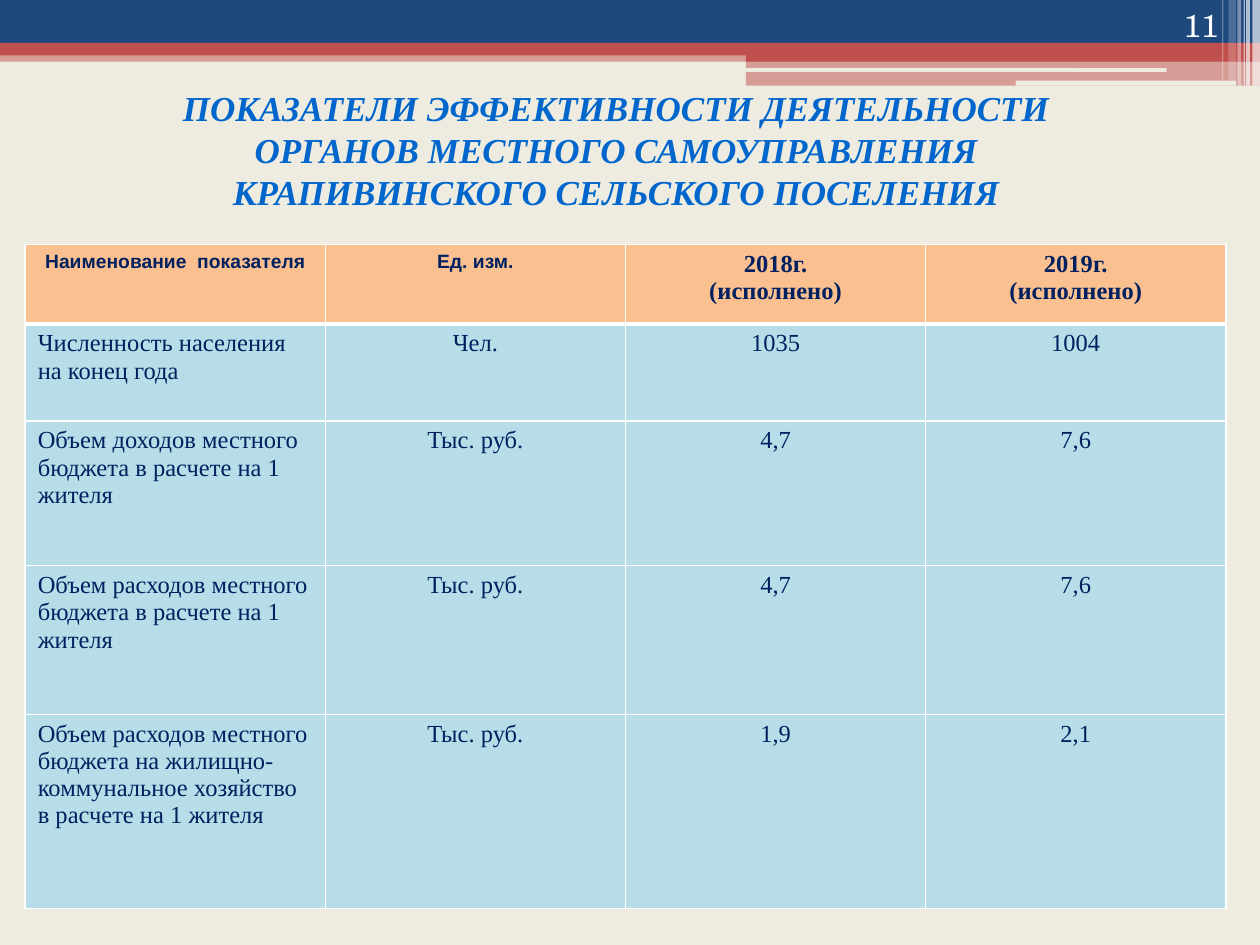
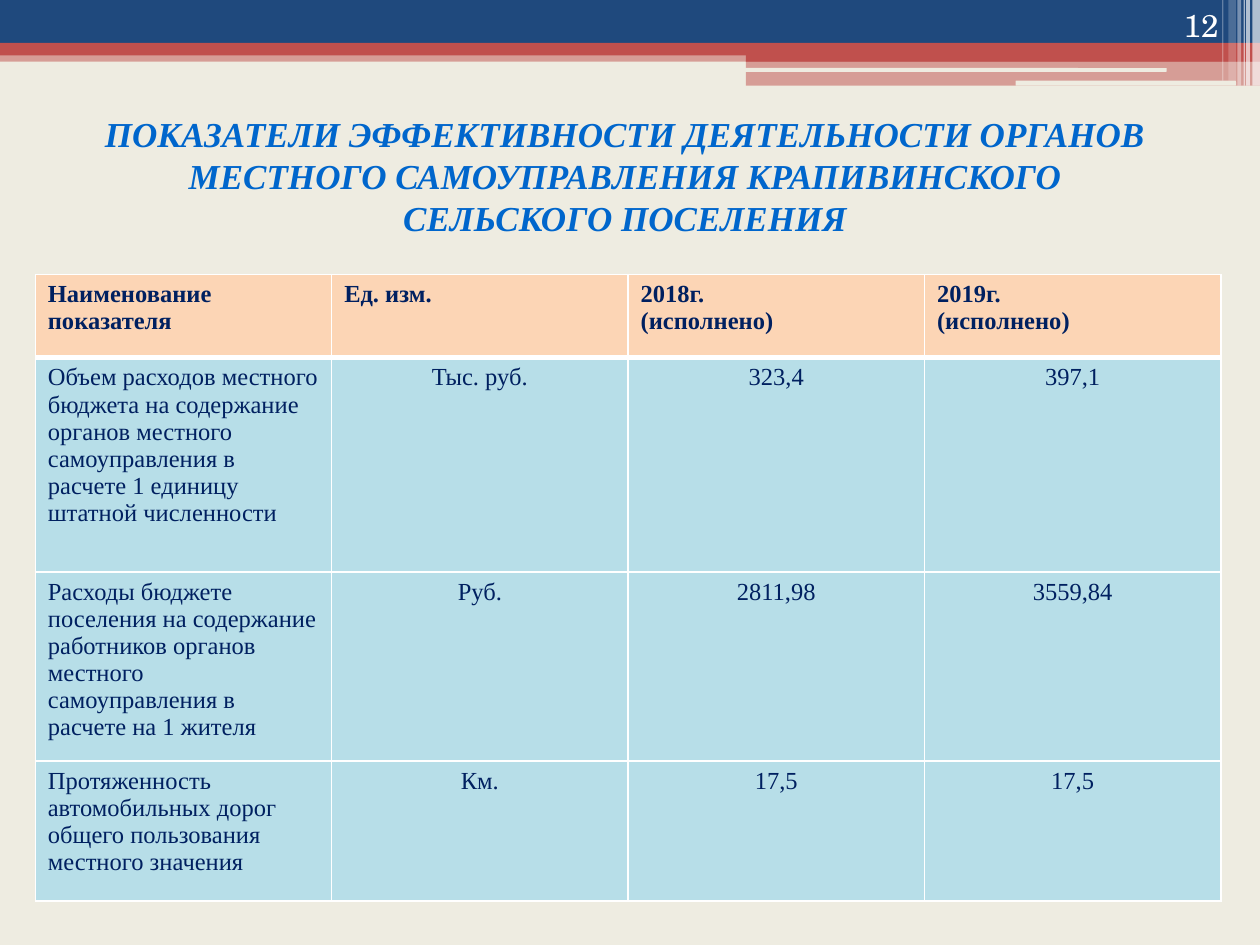
from lxml import etree
from pptx import Presentation
from pptx.dml.color import RGBColor
from pptx.enum.shapes import MSO_SHAPE
from pptx.enum.text import MSO_ANCHOR, MSO_AUTO_SIZE, PP_ALIGN
from pptx.oxml.ns import qn
from pptx.util import Inches, Pt

RECT, ROUNDED = MSO_SHAPE.RECTANGLE, MSO_SHAPE.ROUNDED_RECTANGLE
LEFT, CENTER, RIGHT = PP_ALIGN.LEFT, PP_ALIGN.CENTER, PP_ALIGN.RIGHT
TOP, MIDDLE, BOTTOM = MSO_ANCHOR.TOP, MSO_ANCHOR.MIDDLE, MSO_ANCHOR.BOTTOM

SERIF, SANS, NUMERALS = "Times New Roman", "Arial", "TeX Gyre Schola"
PAPER, NAVY, RED, WHITE = "EEECE1", "1F497D", "C0504D", "FFFFFF"
TITLE_BLUE, INK, CELL_BLUE = "0066CC", "002060", "B7DEE8"

TITLE = ("ПОКАЗАТЕЛИ ЭФФЕКТИВНОСТИ ДЕЯТЕЛЬНОСТИ ОРГАНОВ МЕСТНОГО "
         "САМОУПРАВЛЕНИЯ КРАПИВИНСКОГО СЕЛЬСКОГО ПОСЕЛЕНИЯ")
YEARS = ["2018г.\n(исполнено)", "2019г.\n(исполнено)"]

BANDS = [
    (RECT, 0, 0.4, 10, 0.09, RED, 50),
    (RECT, 0, 0, 10, 0.34, NAVY, 100),
    (RECT, 0, 0.34, 10, 0.1, RED, 100),
    (RECT, 5.92, 0.39, 4.08, 0.1, RED, 100),
    (RECT, 5.92, 0.48, 4.08, 0.2, RED, 50),
    (ROUNDED, 5.91, 0.54, 3.35, 0.03, PAPER, 100),
    (ROUNDED, 8.06, 0.64, 1.75, 0.04, PAPER, 100),
    (RECT, 9.94, 0, 0.06, 0.68, WHITE, 65),
    (RECT, 9.89, 0, 0.03, 0.68, WHITE, 65),
    (RECT, 9.87, 0, 0.01, 0.68, WHITE, 60),
    (RECT, 9.82, 0, 0.03, 0.68, WHITE, 40),
    (RECT, 9.75, 0, 0.06, 0.64, WHITE, 20),
    (RECT, 9.7, 0, 0.01, 0.64, WHITE, 30),
]

POPULATION_AND_BUDGET = [
    ["Численность населения на конец года", "Чел.", "1035", "1004"],
    ["Объем доходов местного бюджета в расчете на 1 жителя",
     "Тыс. руб.", "4,7", "7,6"],
    ["Объем расходов местного бюджета в расчете на 1 жителя",
     "Тыс. руб.", "4,7", "7,6"],
    ["Объем расходов местного бюджета на жилищно-коммунальное хозяйство "
     "в расчете на 1 жителя", "Тыс. руб.", "1,9", "2,1"],
]
STAFF_AND_ROADS = [
    ["Объем расходов местного бюджета на содержание органов местного "
     "самоуправления в расчете 1 единицу штатной численности",
     "Тыс. руб.", "323,4", "397,1"],
    ["Расходы бюджете поселения на содержание работников органов местного "
     "самоуправления в расчете на 1 жителя", "Руб.", "2811,98", "3559,84"],
    ["Протяженность автомобильных дорог общего пользования местного значения",
     "Км.", "17,5", "17,5"],
]


def color(hex_string):
    """Turn a hex string into a colour."""
    return RGBColor.from_string(hex_string)


def format_text(tf, name, size, fill, align, bold=False, italic=False):
    """Give every paragraph of a text frame the same font and alignment."""
    for p in tf.paragraphs:
        p.alignment = align
        p.font.name, p.font.size = name, Pt(size)
        p.font.bold, p.font.italic = bold, italic
        p.font.color.rgb = color(fill)


def add_band(slide, kind, left, top, width, height, fill, opacity):
    """Draw one plain band and return it."""
    sp = slide.shapes.add_shape(kind, Inches(left), Inches(top),
                                Inches(width), Inches(height))
    sp.shadow.inherit = False
    sp.fill.solid()
    sp.fill.fore_color.rgb = color(fill)
    sp.line.fill.background()
    if opacity < 100:
        tint = sp._element.spPr.find(".//" + qn("a:srgbClr"))
        etree.SubElement(tint, qn("a:alpha"), val=str(opacity * 1000))
    return sp


def move_bands_to_layout(slide):
    """Draw the bands and hand them to the layout that the slides share."""
    tree = slide.slide_layout.shapes._spTree
    for number, band in enumerate(BANDS, start=100):
        sp = add_band(slide, *band)
        sp._element.nvSpPr.cNvPr.set("id", str(number))
        tree.append(sp._element)


def set_title(slide, left, top, width, height, anchor):
    """Place and format the title."""
    sp = slide.shapes.title
    sp.left, sp.top = Inches(left), Inches(top)
    sp.width, sp.height = Inches(width), Inches(height)
    tf = sp.text_frame
    tf.text = TITLE
    tf.word_wrap, tf.auto_size = True, MSO_AUTO_SIZE.NONE
    tf.vertical_anchor = anchor
    format_text(tf, SERIF, 20, TITLE_BLUE, CENTER, bold=True, italic=True)


def add_page_number(slide, number):
    """Write the page number in the top band."""
    sp = slide.shapes.add_textbox(Inches(8.94), 0, Inches(0.83), Inches(0.4))
    tf = sp.text_frame
    tf.text = str(number)
    tf.word_wrap, tf.vertical_anchor = True, BOTTOM
    format_text(tf, NUMERALS, 18, WHITE, RIGHT)


def set_borders(cell, top, bottom):
    """Draw white cell borders, 1 point wide at the sides."""
    tc_pr = cell._tc.get_or_add_tcPr()
    for i, (side, width) in enumerate(
            [("L", 1), ("R", 1), ("T", top), ("B", bottom)]):
        ln = etree.Element(qn(f"a:ln{side}"), w=str(Pt(width)))
        fill = etree.SubElement(ln, qn("a:solidFill"))
        etree.SubElement(fill, qn("a:srgbClr"), val=WHITE)
        tc_pr.insert(i, ln)


def add_indicators(slide, left, top, width, heights, head, rows, head_fill,
                   head_align, label_font=(SERIF, 14)):
    """Add a table of indicators with equal columns."""
    table = slide.shapes.add_table(
        len(heights), len(head), Inches(left), Inches(top),
        Inches(width), Inches(sum(heights))).table
    table.horz_banding = False
    for column in table.columns:
        column.width = Inches(width / len(head))
    for r, (height, texts) in enumerate(zip(heights, [head] + rows)):
        table.rows[r].height = Inches(height)
        for c, text in enumerate(texts):
            cell = table.cell(r, c)
            cell.text = text
            cell.fill.solid()
            cell.fill.fore_color.rgb = color(CELL_BLUE if r else head_fill)
            if r:
                font, align = (SERIF, 14), CENTER if c else LEFT
            else:
                font, align = label_font if c < 2 else (SERIF, 14), head_align
            format_text(cell.text_frame, *font, INK, align, bold=r == 0)
            set_borders(cell, 3 if r == 1 else 1, 3 if r == 0 else 1)


def main():
    """Build both slides and save them."""
    prs = Presentation()
    prs.slide_width, prs.slide_height = Inches(10), Inches(7.5)
    background = prs.slide_master.background.fill
    background.solid()
    background.fore_color.rgb = color(PAPER)
    layout = prs.slide_layouts[5]

    slide = prs.slides.add_slide(layout)
    move_bands_to_layout(slide)
    set_title(slide, 0.91, 0.68, 7.96, 1.02, MIDDLE)
    add_page_number(slide, 11)
    add_indicators(slide, 0.2, 1.94, 9.53, [0.63, 0.77, 1.15, 1.18, 1.54],
                   ["Наименование  показателя", "Ед. изм."] + YEARS,
                   POPULATION_AND_BUDGET, "FAC090", CENTER, (SANS, 11))

    slide = prs.slides.add_slide(layout)
    set_title(slide, 0.67, 0.84, 8.58, 1.11, TOP)
    add_page_number(slide, 12)
    add_indicators(slide, 0.28, 2.18, 9.41, [0.66, 1.7, 1.5, 1.11],
                   ["Наименование показателя", "Ед. изм."] + YEARS,
                   STAFF_AND_ROADS, "FCD5B5", LEFT)

    prs.save("out.pptx")


if __name__ == "__main__":
    main()
